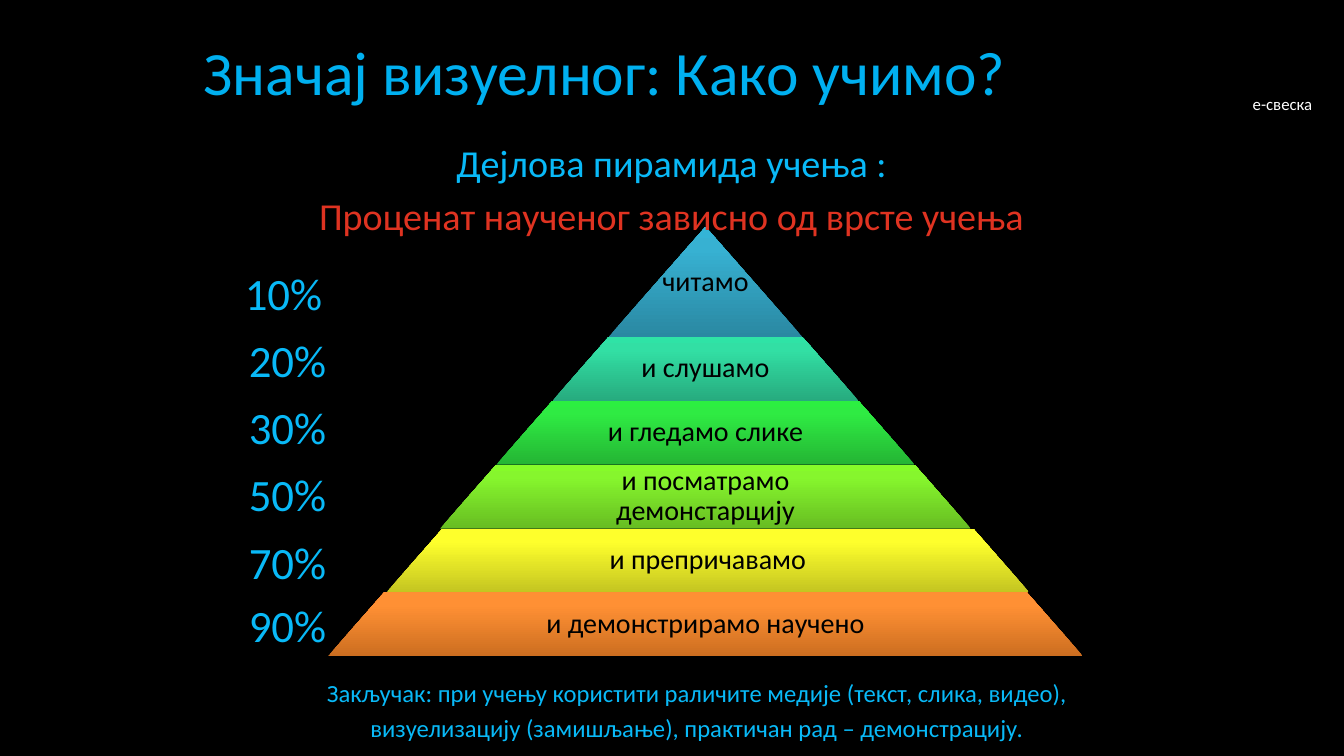
from copy import deepcopy

from pptx import Presentation, util as u
from pptx.dml.color import RGBColor
from pptx.enum import shapes, text


def color(hex_code):
    return RGBColor.from_string(hex_code)


class PyramidSlide:
    font_name = "Calibri"
    sky = "09B9F7"
    black = "000000"

    def __init__(self, deck):
        self.slide = deck.slides.add_slide(deck.slide_layouts[6])
        self.slide.background.fill.solid()
        self.slide.background.fill.fore_color.rgb = color(self.black)

    def words(self, box, lines, size, tint=sky, align="LEFT", anchor="TOP",
              inset=None, wrap=True, gap=0, spacing=None):
        holder = self.slide.shapes.add_textbox(*map(u.Cm, box))
        frame = holder.text_frame
        frame_format = {"word_wrap": wrap,
                        "vertical_anchor": getattr(text.MSO_ANCHOR, anchor)}
        if inset is not None:
            for side in ("left", "top", "right", "bottom"):
                frame_format["margin_" + side] = u.Cm(inset)
        for key, value in frame_format.items():
            setattr(frame, key, value)
        for index, line in enumerate(lines):
            wording, line_tint = line if isinstance(line, tuple) else (line, tint)
            paragraph = frame.add_paragraph() if index else frame.paragraphs[0]
            run = paragraph.add_run()
            run.text = wording
            paragraph_format = {"alignment": getattr(text.PP_ALIGN, align),
                                "line_spacing": spacing,
                                "space_before": u.Pt(gap) if index else None}
            for key, value in paragraph_format.items():
                setattr(paragraph, key, value)
            for key, value in {"name": self.font_name, "size": u.Pt(size)}.items():
                setattr(run.font, key, value)
            run.font.color.rgb = color(line_tint)

    def band(self, box, tints):
        layer = self.slide.shapes.add_shape(
            shapes.MSO_SHAPE.TRAPEZOID, *map(u.Cm, box))
        layer.adjustments[0] = 0.88
        layer.shadow.inherit = False
        layer.line.fill.background()
        layer.fill.gradient()
        layer.fill.gradient_angle = 90
        first_stop = layer._element.spPr.xpath(".//a:gs")[0]
        first_stop.addnext(deepcopy(first_stop))
        for stop, position, tint in zip(layer.fill.gradient_stops, (0, 0.8, 1), tints):
            stop.position = position
            stop.color.rgb = color(tint)


LEVELS = [
    ("читамо", ("2A88A2", "37B1D2", "34B4D6"), "10%", 6.56),
    ("и слушамо", ("27AB7E", "32DFA4", "2FE3A6"), "20%", 8.26),
    ("и гледамо слике", ("24B534", "2FEB43", "2CEF41"), "30%", 9.95),
    ("и посматрамо демонстарцију", ("67BD22", "86F62D", "86FB29"), "50%", 11.64),
    ("и препричавамо", ("C4C521", "FEFF2C", "FEFF2D"), "70%", 13.34),
    ("и демонстрирамо научено", ("CC6E20", "FF9034", "FF9136"), "90%", 14.94),
]
APEX_TOP, APEX_HEIGHT, BAND_HEIGHT = 5.72, 2.77, 1.61
APEX_WIDTH, WIDTH_STEP, CENTRE = 4.88, 2.83, 17.78
YELLOW_LEVEL, YELLOW_SHIFT = 4, 0.06


def main():
    deck = Presentation()
    deck.slide_width, deck.slide_height = u.Cm(33.87), u.Cm(19.05)
    page = PyramidSlide(deck)

    page.words((31.32, 2.24, 2.03, 0.76), ["е-свеска"], 12, "FFFFFF", wrap=False)
    page.words((4.24, 0.2, 22.02, 3.18), ["Значај визуелног: Како учимо?"], 44,
               "00B0F0", align="CENTER", anchor="MIDDLE")

    top = APEX_TOP
    for level, (activity, tints, share, share_top) in enumerate(LEVELS):
        height = BAND_HEIGHT if level else APEX_HEIGHT
        width = APEX_WIDTH + level * WIDTH_STEP
        label_width = width * 0.65 if level else width
        centre = CENTRE + (YELLOW_SHIFT if level == YELLOW_LEVEL else 0)
        page.band((centre - width / 2, top, width, height), tints)
        page.words((centre - label_width / 2, top, label_width, height), [activity],
                   20, page.black, align="CENTER", anchor="MIDDLE", inset=0.07,
                   spacing=0.9)
        page.words((6.02 if level else 5.92, share_top, 22.02, 1.69), [share], 32)
        top += height

    page.words((5.92, 3.39, 22.02, 2.33),
               ["Дејлова пирамида учења :",
                ("Проценат наученог зависно од врсте учења", "DF3321")],
               27.2, align="CENTER", gap=5.4)
    page.words((1.27, 16.96, 32.6, 1.69),
               ["Закључак: при учењу користити раличите медије (текст, слика, видео),",
                "визуелизацију (замишљање), практичан рад – демонстрацију."],
               17.6, align="CENTER", gap=3.5)
    deck.save("out.pptx")


if __name__ == "__main__":
    main()
